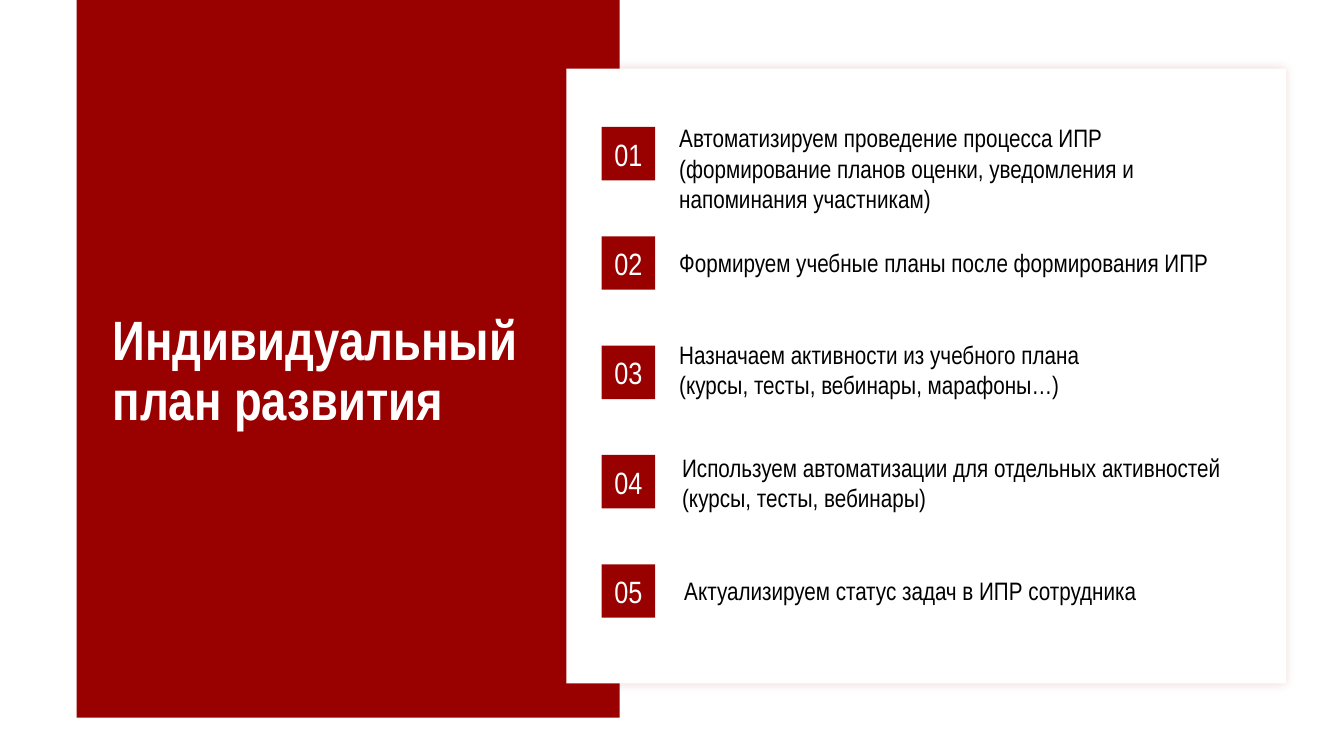
from dataclasses import dataclass

from lxml.etree import SubElement
from pptx import Presentation
from pptx.dml.color import RGBColor
from pptx.enum.shapes import MSO_SHAPE
from pptx.enum.text import MSO_ANCHOR, PP_ALIGN
from pptx.oxml.ns import qn
from pptx.util import Pt


@dataclass(frozen=True)
class Theme:
    red: RGBColor = RGBColor(0x99, 0x00, 0x00)
    white: RGBColor = RGBColor(0xFF, 0xFF, 0xFF)
    black: RGBColor = RGBColor(0x00, 0x00, 0x00)
    font: str = "Arial Narrow"
    title: float = 39.6
    number: float = 22
    body: float = 18


THEME = Theme()
TITLE = "Индивидуальный план развития"
BADGE = 38.2
ROW_STEP = 78.1

STEPS = [
    (["Автоматизируем проведение процесса ИПР (формирование планов оценки, "
      "уведомления и напоминания участникам)"], 48.3, -6.5, 406.8),
    (["Формируем учебные планы после формирования ИПР"], 48.3, 4, 437),
    (["Назначаем активности из учебного плана",
      "(курсы, тесты, вебинары, марафоны…)"], 48.3, -7.9, 437),
    (["Используем автоматизации для отдельных активностей",
      "(курсы, тесты, вебинары)"], 50.4, -5.3, 437),
    (["Актуализируем статус задач в ИПР сотрудника"], 51.9, 4.4, 437),
]


def add_rect(s, x, y, w, h, color):
    sp = s.shapes.add_shape(MSO_SHAPE.RECTANGLE, Pt(x), Pt(y), Pt(w), Pt(h))
    sp.shadow.inherit = False
    sp.fill.solid()
    sp.fill.fore_color.rgb = color
    sp.line.fill.background()
    return sp


def add_glow_shadow(sp, color, blur, alpha):
    effects = sp.element.spPr.find(qn("a:effectLst"))
    shadow = SubElement(effects, qn("a:outerShdw"), blurRad=str(Pt(blur)),
                        dist="0", dir="0", algn="ctr", rotWithShape="0")
    tint = SubElement(shadow, qn("a:srgbClr"), val=str(color))
    SubElement(tint, qn("a:alpha"), val=str(alpha * 1000))


def write(sp, lines, size, color, bold=False, align=PP_ALIGN.LEFT, spacing=1.0):
    tf = sp.text_frame
    tf.word_wrap = True
    tf.text = "\n".join(lines)
    for p in tf.paragraphs:
        p.alignment = align
        p.line_spacing = spacing
        p.font.name = THEME.font
        p.font.size = Pt(size)
        p.font.bold = bold
        p.font.color.rgb = color
    return tf


def add_title_panel(s, x, y, w, h):
    add_rect(s, x, y, w, h, THEME.red)
    box = s.shapes.add_textbox(Pt(x + 18.7), Pt(y + 239), Pt(355), Pt(54.7))
    tf = write(box, [TITLE], THEME.title, THEME.white, bold=True, spacing=0.9)
    tf.vertical_anchor = MSO_ANCHOR.MIDDLE


def add_badge(s, x, y, number):
    sp = add_rect(s, x, y, BADGE, BADGE, THEME.red)
    tf = write(sp, [f"{number:02}"], THEME.number, THEME.white, align=PP_ALIGN.CENTER)
    tf.margin_left = tf.margin_right = 0
    tf.vertical_anchor = MSO_ANCHOR.MIDDLE


def add_steps_card(s, x, y, w, h):
    card = add_rect(s, x, y, w, h, THEME.white)
    add_glow_shadow(card, THEME.red, blur=7, alpha=15)
    left, top = x + 25.2, y + 41.7
    for i, (lines, dx, dy, width) in enumerate(STEPS):
        row = top + i * ROW_STEP
        add_badge(s, left, row, i + 1)
        height = 7.2 + 22 * len(lines)
        box = s.shapes.add_textbox(Pt(left + dx), Pt(row + dy), Pt(width), Pt(height))
        write(box, lines, THEME.body, THEME.black)


def main():
    prs = Presentation()
    prs.slide_width, prs.slide_height = Pt(960), Pt(540)
    s = prs.slides.add_slide(prs.slide_layouts[6])
    add_title_panel(s, 54.7, 0, 388, 512.6)
    add_steps_card(s, 404.6, 49, 514, 439.2)
    prs.save("out.pptx")


if __name__ == "__main__":
    main()
